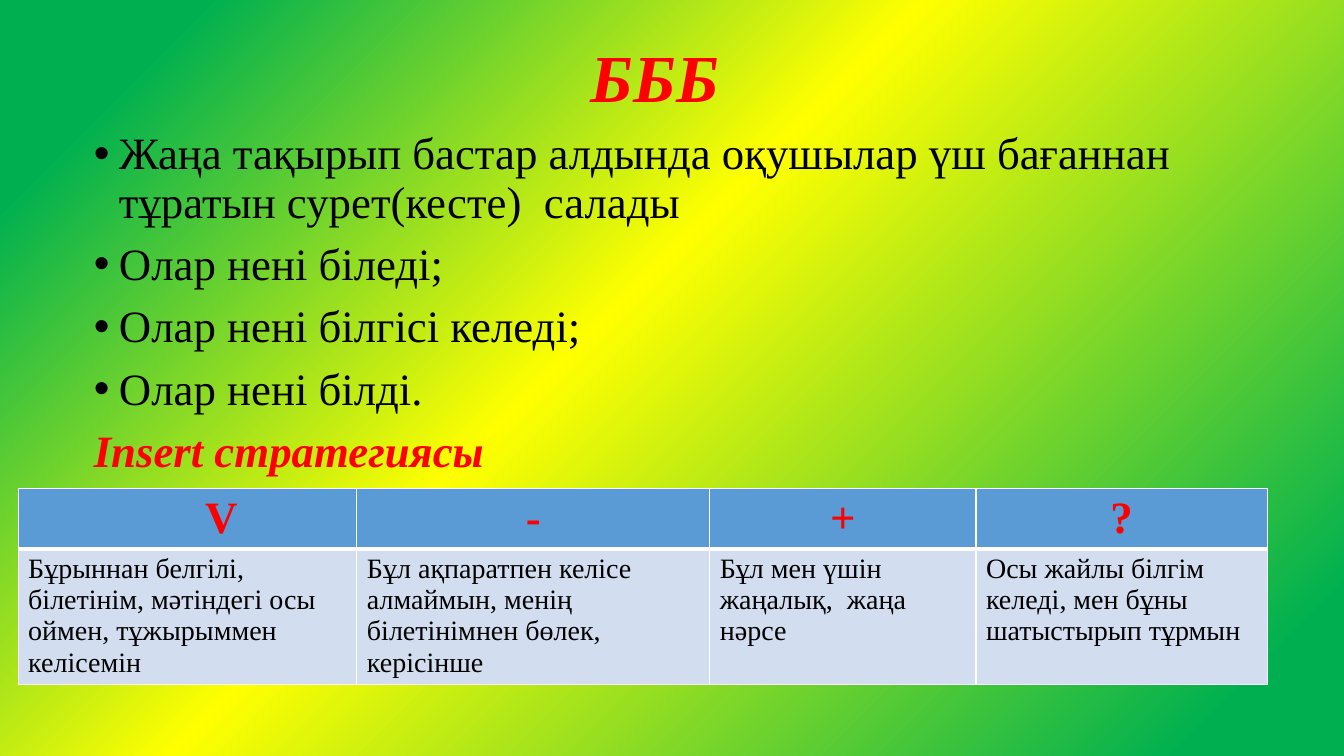
from lxml import etree
from pptx import Presentation
from pptx.dml.color import RGBColor
from pptx.enum.text import MSO_ANCHOR, MSO_AUTO_SIZE, PP_ALIGN
from pptx.oxml import parse_xml
from pptx.oxml.ns import qn
from pptx.util import Inches, Pt

CENTER, LEFT = PP_ALIGN.CENTER, PP_ALIGN.LEFT
TOP = MSO_ANCHOR.TOP
NO_AUTOFIT = MSO_AUTO_SIZE.NONE
FONT = "Times New Roman"
RED, BLACK, WHITE = "FF0000", "000000", "FFFFFF"


def color(value):
    return RGBColor.from_string(value)


def add_span(para, text, size, ink, bold=False, italic=False):
    span = para.add_run()
    span.text = text
    span.font.name = FONT
    span.font.size = Pt(size)
    span.font.color.rgb = color(ink)
    span.font.bold = bold
    span.font.italic = italic


deck = Presentation()
deck.slide_width = Inches(13.33)
deck.slide_height = Inches(7.5)
page = deck.slides.add_slide(deck.slide_layouts[1])
title = page.shapes.title.element
title.getparent().remove(title)

stops = "".join(
    f'<a:gs pos="{position * 1000}"><a:srgbClr val="{shade}"/></a:gs>'
    for position, shade in [(8, "00B050"), (56, "FFFF00"), (90, "00B050")]
)
page.element.cSld.insert(0, parse_xml(
    '<p:bg xmlns:p="http://schemas.openxmlformats.org/presentationml/2006/main" '
    'xmlns:a="http://schemas.openxmlformats.org/drawingml/2006/main"><p:bgPr>'
    f'<a:gradFill><a:gsLst>{stops}</a:gsLst><a:path path="circle">'
    '<a:fillToRect l="100000" t="100000"/></a:path>'
    '<a:tileRect r="-100000" b="-100000"/></a:gradFill>'
    '<a:effectLst/></p:bgPr></p:bg>'
))

body = page.placeholders[1]
body.left, body.top = Inches(0.83), Inches(0.39)
body.width, body.height = Inches(11.5), Inches(6.61)
frame = body.text_frame
frame.word_wrap = True
frame.auto_size = NO_AUTOFIT
frame.vertical_anchor = TOP

body_lines = [
    ("БББ ", 48, RED, CENTER, False),
    ("Жаңа тақырып бастар алдында оқушылар үш бағаннан тұратын сурет(кесте)  салады", 32, BLACK, LEFT, True),
    ("Олар нені біледі;", 32, BLACK, LEFT, True),
    ("Олар нені білгісі келеді;", 32, BLACK, LEFT, True),
    ("Олар нені білді.", 32, BLACK, LEFT, True),
    ("Іnsert стратегиясы", 32, RED, LEFT, False),
]
for number, (text, size, ink, alignment, bulleted) in enumerate(body_lines):
    para = frame.add_paragraph() if number else frame.paragraphs[0]
    para.alignment = alignment
    para.line_spacing = 0.9
    para.space_before = Pt(10 if number else 0)
    para.space_after = Pt(0)
    properties = para._p.get_or_add_pPr()
    indent = Inches(0.25) if bulleted else 0
    properties.set("marL", str(indent))
    properties.set("indent", str(-indent))
    if bulleted:
        etree.SubElement(properties, qn("a:buFont"), typeface="Arial")
        etree.SubElement(properties, qn("a:buChar"), char="•")
    else:
        etree.SubElement(properties, qn("a:buNone"))
    add_span(para, text, size, ink, bold=not bulleted, italic=not bulleted)

column_widths = [3.36, 3.5, 2.64, 2.89]
row_heights = [0.58, 1.35]
insert_rows = [
    ["V", "-", "+", "?"],
    [
        "Бұрыннан белгілі, білетінім, мәтіндегі осы оймен, тұжырыммен келісемін",
        "Бұл ақпаратпен келісе алмаймын, менің білетінімнен бөлек, керісінше",
        "Бұл мен үшін жаңалық,  жаңа нәрсе",
        "Осы жайлы білгім келеді, мен бұны шатыстырып тұрмын",
    ],
]
table = page.shapes.add_table(
    2, 4, Inches(0.18), Inches(4.85), Inches(sum(column_widths)), Inches(sum(row_heights))
).table
for column, width in zip(table.columns, column_widths):
    column.width = Inches(width)
for row, height in zip(table.rows, row_heights):
    row.height = Inches(height)

for row_number, texts in enumerate(insert_rows):
    header = row_number == 0
    for column_number, text in enumerate(texts):
        cell = table.cell(row_number, column_number)
        cell_properties = cell._tc.get_or_add_tcPr()
        for side in "LRTB":
            thick = side == ("B" if header else "T")
            border = etree.SubElement(cell_properties, qn(f"a:ln{side}"), w=str(Pt(3 if thick else 1)))
            border_fill = etree.SubElement(border, qn("a:solidFill"))
            etree.SubElement(border_fill, qn("a:srgbClr"), val=WHITE)
        cell.fill.solid()
        cell.fill.fore_color.rgb = color("5B9BD5" if header else "D2DEEF")
        para = cell.text_frame.paragraphs[0]
        para.alignment = CENTER if header else LEFT
        add_span(para, text, 32 if header else 20, RED if header else BLACK, bold=header)
table.cell(0, 0).margin_left = Inches(0.77)

deck.save("out.pptx")
